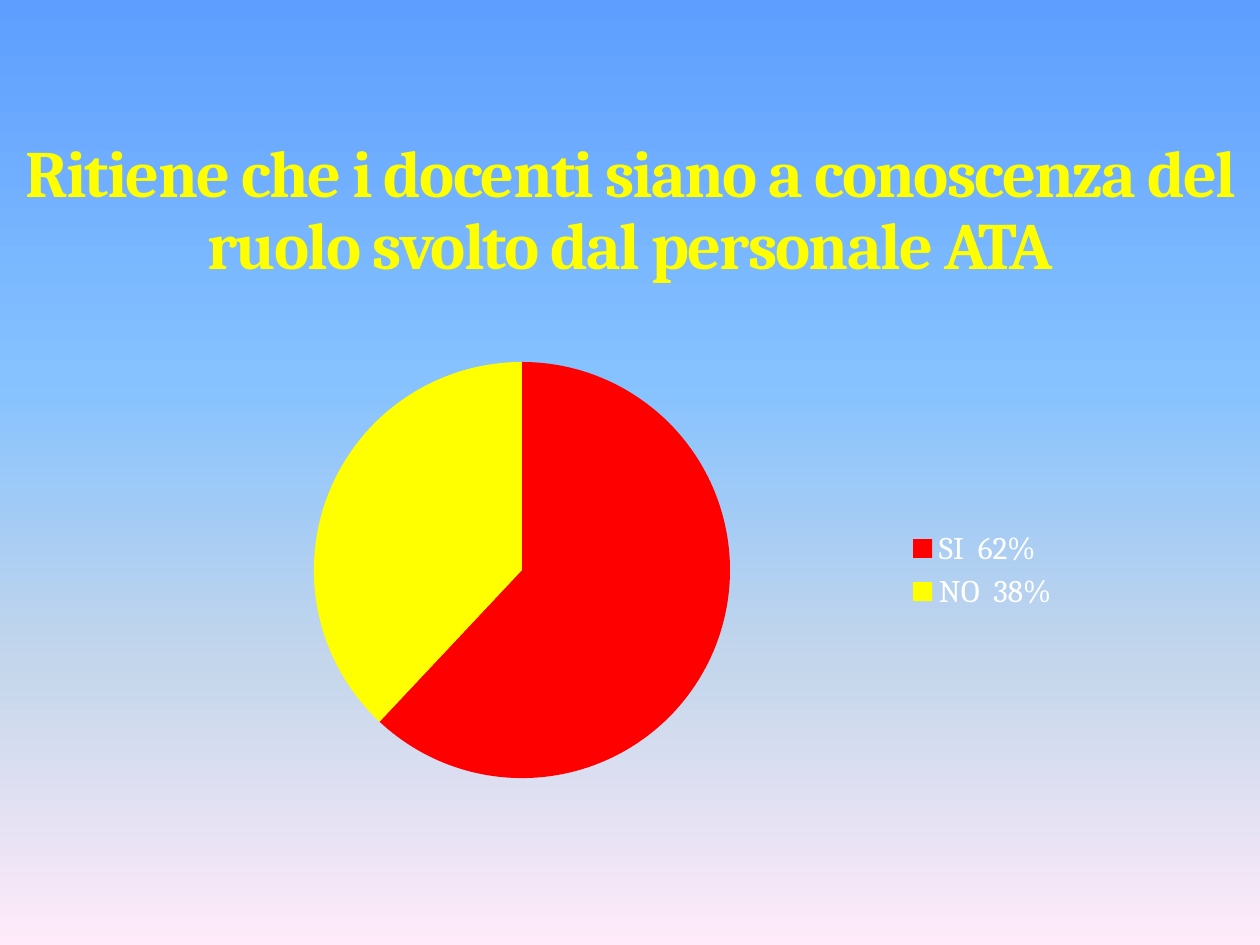
from dataclasses import dataclass

from lxml.etree import SubElement
from pptx import Presentation
from pptx.chart.data import CategoryChartData
from pptx.dml.color import RGBColor
from pptx.enum.chart import XL_CHART_TYPE, XL_LEGEND_POSITION
from pptx.enum.text import MSO_ANCHOR, MSO_AUTO_SIZE, PP_ALIGN
from pptx.oxml.ns import qn
from pptx.util import Inches, Pt


@dataclass(frozen=True)
class Theme:
    font: str = "Cambria"
    title_size: float = 37.8
    legend_size: float = 18
    title: str = "FFFF00"
    legend: str = "FFFFFF"
    answers: tuple = ("FF0000", "FFFF00")
    sky: tuple = ((0, "5E9EFF"), (40, "85C2FF"), (70, "C4D6EB"), (100, "FFEBFA"))


theme = Theme()
presentation = Presentation()
presentation.slide_width = Inches(10)
presentation.slide_height = Inches(7.5)
slide = presentation.slides.add_slide(presentation.slide_layouts[5])

sky = slide.background.fill
sky.gradient()
sky.gradient_angle = 270
stops = slide.element.find(".//" + qn("a:gsLst"))
for stop in list(stops):
    stops.remove(stop)
for position, color in theme.sky:
    stop = SubElement(stops, qn("a:gs"), pos=str(position * 1000))
    SubElement(stop, qn("a:srgbClr"), val=color)

question = slide.shapes.title
question.left, question.top = Inches(0), Inches(0.17)
question.width, question.height = Inches(10), Inches(2.72)
question_text = question.text_frame
question_text.text = "Ritiene che i docenti siano a conoscenza del ruolo svolto dal personale ATA"
question_text.word_wrap = True
question_text.auto_size = MSO_AUTO_SIZE.NONE
question_text.vertical_anchor = MSO_ANCHOR.BOTTOM
question_text.margin_bottom = Inches(0.64)
heading = question_text.paragraphs[0]
heading.alignment = PP_ALIGN.CENTER
heading.line_spacing = 0.9
heading.font.name = theme.font
heading.font.size = Pt(theme.title_size)
heading.font.bold = True
heading.font.color.rgb = RGBColor.from_string(theme.title)
heading.runs[0].font._element.set("spc", "-100")

answers = CategoryChartData()
answers.categories = ["SI  62%", "NO  38%"]
answers.add_series("Series 1", (62, 38))
pie = slide.shapes.add_chart(
    XL_CHART_TYPE.PIE, Inches(1.17), Inches(2.73), Inches(7.34), Inches(3.59), answers
).chart
pie.has_title = False
pie.font.name = theme.font
pie.font.size = Pt(theme.legend_size)
pie.font.color.rgb = RGBColor.from_string(theme.legend)
pie.has_legend = True
pie.legend.position = XL_LEGEND_POSITION.RIGHT
pie.legend.include_in_layout = True

plot = pie.plots[0]
plot.vary_by_categories = True
for index, color in enumerate(theme.answers):
    slice_format = plot.series[0].points[index].format
    slice_format.fill.solid()
    slice_format.fill.fore_color.rgb = RGBColor.from_string(color)
    slice_format.line.fill.background()

plot_area = pie.element.find(".//" + qn("c:plotArea"))
layout = plot_area.find(qn("c:layout"))
if layout is None:
    layout = SubElement(plot_area, qn("c:layout"))
    plot_area.insert(0, layout)
manual = SubElement(layout, qn("c:manualLayout"))
for setting, value in (
    ("layoutTarget", "inner"), ("xMode", "edge"), ("yMode", "edge"),
    ("x", "0.18"), ("y", "0.04"), ("w", "0.45"), ("h", "0.92"),
):
    SubElement(manual, qn("c:" + setting), val=value)

presentation.save("out.pptx")
